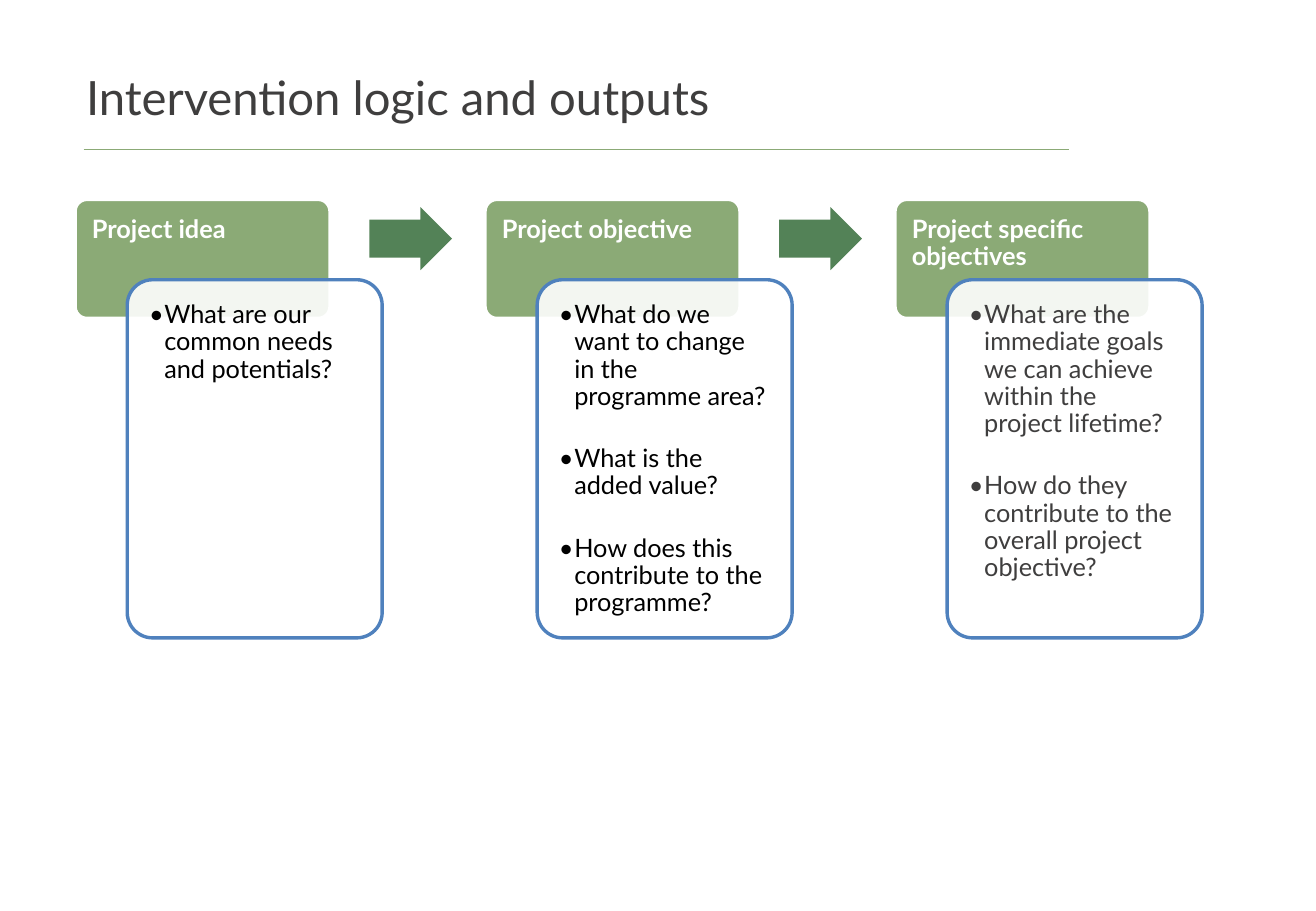
from lxml.etree import SubElement
from pptx import Presentation
from pptx.dml.color import RGBColor
from pptx.enum.shapes import MSO_CONNECTOR, MSO_SHAPE
from pptx.enum.text import MSO_ANCHOR, MSO_AUTO_SIZE, PP_ALIGN
from pptx.oxml.ns import qn
from pptx.util import Cm, Pt

COLORS = {
    "sage": "8BAA76",
    "arrow": "538257",
    "border": "4F81BD",
    "white": "FFFFFF",
    "black": "000000",
    "charcoal": "3F3E3E",
}

TITLE_FORMAT = {"name": "Lato", "size": Pt(28), "bold": False}
HEADING_FORMAT = {"name": "Lato", "size": Pt(15), "bold": True}
QUESTION_FORMAT = {"name": "Lato", "size": Pt(15), "bold": False}

STAGES = [
    ("Project idea", "black", ["What are our common needs and potentials?"]),
    ("Project objective", "black", [
        "What do we want to change in the programme area?",
        "What is the added value?",
        "How does this contribute to the programme?",
    ]),
    ("Project specific objectives", "charcoal", [
        "What are the immediate goals we can achieve within the project lifetime?",
        "How do they contribute to the overall project objective?",
    ]),
]

FIRST_LEFT, STAGE_TOP, STAGE_STEP = Cm(1.57), Cm(4.17), Cm(8.57)
BLOCK_WIDTH = Cm(5.33)


def rgb(color):
    return RGBColor.from_string(COLORS[color])


def set_frame(frame, inset, anchor):
    values = {
        "word_wrap": True, "auto_size": MSO_AUTO_SIZE.NONE,
        "vertical_anchor": anchor,
        "margin_left": inset, "margin_right": inset,
        "margin_top": inset, "margin_bottom": inset,
    }
    for name, value in values.items():
        setattr(frame, name, value)


def write(paragraph, text, font_format, color):
    paragraph.alignment = PP_ALIGN.LEFT
    run = paragraph.add_run()
    run.text = text
    for name, value in font_format.items():
        setattr(run.font, name, value)
    run.font.color.rgb = rgb(color)


def add_bullet(paragraph):
    properties = paragraph._p.get_or_add_pPr()
    properties.set("marL", str(Cm(0.32)))
    properties.set("indent", str(-Cm(0.32)))
    SubElement(properties, qn("a:buFont"), typeface="Lato")
    SubElement(properties, qn("a:buChar"), char="•")


def add_block(slide, preset, place, fill, adjustments, line=None):
    block = slide.shapes.add_shape(preset, *place)
    block.shadow.inherit = False
    for index, value in enumerate(adjustments):
        block.adjustments[index] = value
    block.fill.solid()
    block.fill.fore_color.rgb = rgb(fill)
    if line:
        block.line.color.rgb = rgb(line)
        block.line.width = Pt(2)
    else:
        block.line.fill.background()
    return block


def add_title(slide):
    title = slide.shapes.title
    place = {"left": Cm(1.55), "top": Cm(0.33), "width": Cm(19.35), "height": Cm(2.41)}
    for name, value in place.items():
        setattr(title, name, value)
    set_frame(title.text_frame, Cm(0.25), MSO_ANCHOR.BOTTOM)
    title.text_frame.margin_bottom = Cm(0.13)
    write(title.text_frame.paragraphs[0], "Intervention logic and outputs",
          TITLE_FORMAT, "charcoal")


def add_title_rule(slide):
    rule = slide.shapes.add_connector(
        MSO_CONNECTOR.STRAIGHT, Cm(1.75), Cm(3.12), Cm(22.35), Cm(3.12))
    rule.line.color.rgb = rgb("sage")
    rule.line.width = Pt(0.5)
    SubElement(rule._element.spPr, qn("a:effectLst"))


def add_heading(slide, left, heading):
    block = add_block(slide, MSO_SHAPE.ROUNDED_RECTANGLE,
                      (left, STAGE_TOP, BLOCK_WIDTH, Cm(2.49)), "sage", [0.1], "white")
    set_frame(block.text_frame, Cm(0.28), MSO_ANCHOR.TOP)
    paragraph = block.text_frame.paragraphs[0]
    write(paragraph, heading, HEADING_FORMAT, "white")
    paragraph.line_spacing = 0.9


def add_questions(slide, left, questions, color):
    card = add_block(slide, MSO_SHAPE.ROUNDED_RECTANGLE,
                     (left + Cm(1.09), STAGE_TOP + Cm(1.68), BLOCK_WIDTH, Cm(7.49)),
                     "white", [0.1], "border")
    fill_color = card._element.spPr.find(qn("a:solidFill"))[0]
    SubElement(fill_color, qn("a:alpha"), val="90000")
    frame = card.text_frame
    set_frame(frame, Cm(0.3), MSO_ANCHOR.TOP)
    for index, question in enumerate(questions):
        paragraph = frame.add_paragraph() if index else frame.paragraphs[0]
        add_bullet(paragraph)
        write(paragraph, question, QUESTION_FORMAT, color)
        paragraph.line_spacing = 0.9
        paragraph.space_before = Pt(20.6 if index else 0)


def add_arrow(slide, left):
    add_block(slide, MSO_SHAPE.RIGHT_ARROW,
              (left + Cm(6.15), STAGE_TOP + Cm(0.16), Cm(1.73), Cm(1.32)),
              "arrow", [0.6, 0.5])


def main():
    presentation = Presentation()
    presentation.slide_width, presentation.slide_height = Cm(27.51), Cm(19.05)
    slide = presentation.slides.add_slide(presentation.slide_layouts.get_by_name("Title Only"))
    add_title_rule(slide)
    add_title(slide)
    for index, (heading, color, questions) in enumerate(STAGES):
        left = FIRST_LEFT + index * STAGE_STEP
        add_heading(slide, left, heading)
        add_questions(slide, left, questions, color)
        if index < len(STAGES) - 1:
            add_arrow(slide, left)
    presentation.save("out.pptx")


if __name__ == "__main__":
    main()
